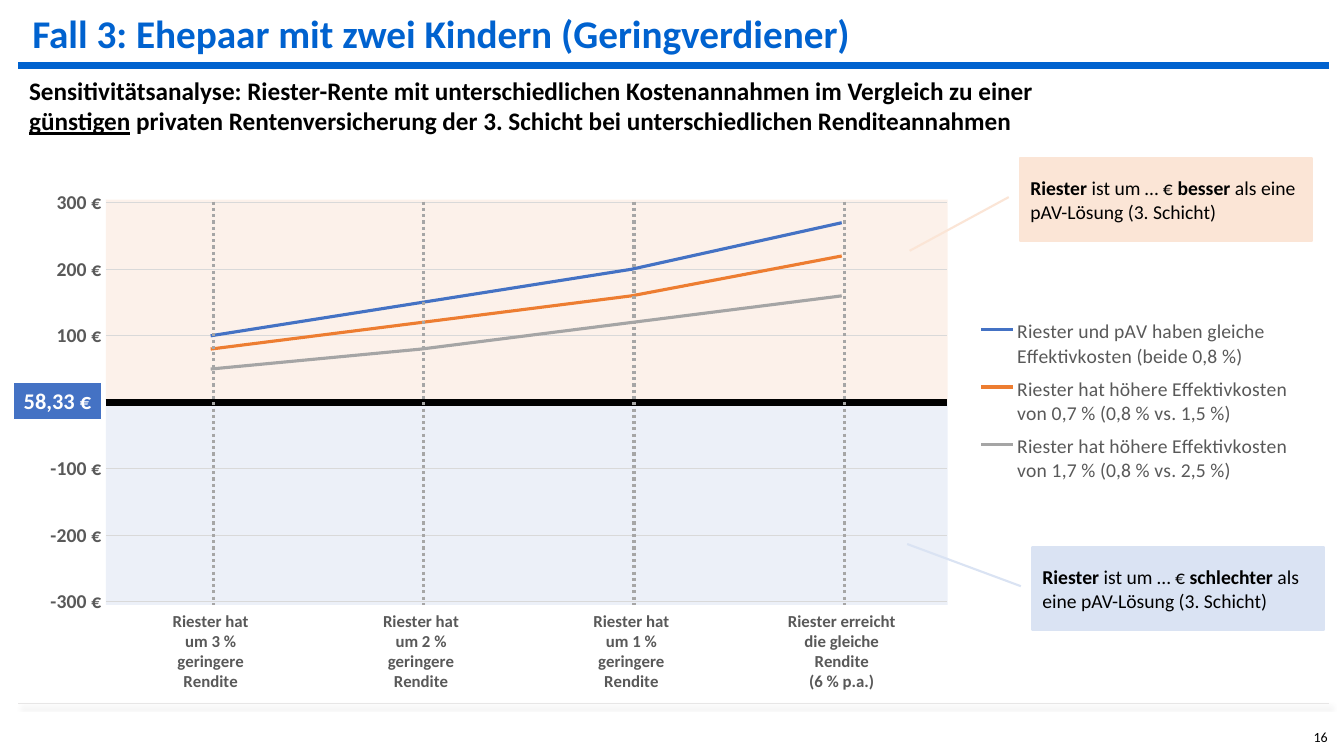
from dataclasses import dataclass
from typing import NamedTuple

from lxml.etree import SubElement
from pptx import Presentation
from pptx.chart.data import CategoryChartData
from pptx.dml.color import RGBColor
from pptx.enum.chart import XL_CHART_TYPE, XL_LEGEND_POSITION, XL_TICK_LABEL_POSITION, XL_TICK_MARK
from pptx.enum.dml import MSO_LINE
from pptx.enum.shapes import MSO_CONNECTOR, MSO_SHAPE
from pptx.enum.text import MSO_ANCHOR, MSO_AUTO_SIZE, PP_ALIGN
from pptx.oxml import parse_xml
from pptx.oxml.ns import nsdecls, qn
from pptx.util import Inches, Pt


@dataclass(frozen=True)
class Theme:
    font: str = "Calibri"
    brand: str = "0062CF"
    ink: str = "000000"
    paper: str = "FFFFFF"
    label: str = "595959"
    guide: str = "A6A6A6"
    grid: str = "D9D9D9"
    footer: str = "E7E6E6"
    better: str = "FBE5D6"
    worse: str = "DAE3F3"
    series: tuple = ("4472C4", "ED7D31", "A5A5A5")
    title_size: int = 28
    subtitle_size: int = 18
    value_size: int = 16
    body_size: int = 14
    category_size: int = 12
    small_size: int = 10


THEME = Theme()


def cells(count):
    return Inches(count / 10)


class Box(NamedTuple):
    left: float
    top: float
    width: float
    height: float

    def inner(self, left, top, width, height):
        return Box(self.left + left, self.top + top, width, height)

    def emu(self):
        return [cells(length) for length in self]


def style_font(font, size, color=THEME.ink, bold=False, underline=False):
    font.name = THEME.font
    font.size = Pt(size)
    font.bold = bold
    font.underline = underline
    font.color.rgb = RGBColor.from_string(color)


def add_text(frame, *parts, size, color=THEME.ink, bold=False, align=PP_ALIGN.LEFT,
             anchor=MSO_ANCHOR.TOP, wrap=True):
    frame.word_wrap = wrap
    frame.auto_size = MSO_AUTO_SIZE.NONE
    frame.vertical_anchor = anchor
    paragraph = frame.paragraphs[0]
    paragraph.alignment = align
    for part in parts:
        text, marks = part if isinstance(part, tuple) else (part, "")
        run = paragraph.add_run()
        run.text = text
        style_font(run.font, size, color, bold or "b" in marks, "u" in marks)


def add_panel(slide, box, color, kind=MSO_SHAPE.RECTANGLE, line=None, weight=1.5, alpha=None):
    panel = slide.shapes.add_shape(kind, *box.emu())
    panel.shadow.inherit = False
    panel.fill.solid()
    panel.fill.fore_color.rgb = RGBColor.from_string(color)
    if line:
        panel.line.color.rgb = RGBColor.from_string(line)
        panel.line.width = Pt(weight)
    else:
        panel.line.fill.background()
    if alpha:
        tint = panel.element.xpath(".//a:solidFill/a:srgbClr")[0]
        SubElement(tint, qn("a:alpha"), val=str(alpha * 1000))
    return panel


def add_rule(slide, box, color, weight, dash=None, shadow=False):
    left, top, width, height = box.emu()
    rule = slide.shapes.add_connector(MSO_CONNECTOR.STRAIGHT, left, top, left + width, top + height)
    rule.line.color.rgb = RGBColor.from_string(color)
    rule.line.width = Pt(weight)
    if dash:
        rule.line.dash_style = dash
    effects = SubElement(rule.element.spPr, qn("a:effectLst"))
    if shadow:
        drop = SubElement(effects, qn("a:outerShdw"), blurRad="38100", dist="38100", dir="2700000")
        black = SubElement(drop, qn("a:srgbClr"), val=THEME.ink)
        SubElement(black, qn("a:alpha"), val="40000")


def place_in_chart(parent, index, shares, target=""):
    for old in parent.findall(qn("c:layout")):
        parent.remove(old)
    lengths = "".join(f'<c:{tag} val="{share:.3f}"/>' for tag, share in zip("xywh", shares))
    parent.insert(index, parse_xml(
        f'<c:layout {nsdecls("c")}><c:manualLayout>{target}'
        f'<c:xMode val="edge"/><c:yMode val="edge"/>{lengths}</c:manualLayout></c:layout>'))


def build_header(slide, box):
    title = slide.shapes.title
    title.left, title.top, title.width, title.height = box.inner(0.4, 0.4, 129, 5.7).emu()
    add_text(title.text_frame, "Fall 3: Ehepaar mit zwei Kindern (Geringverdiener)",
             size=THEME.title_size, color=THEME.brand, bold=True)
    add_rule(slide, box.inner(0, 6.5, box.width, 0), THEME.brand, 4.5)
    subtitle = slide.shapes.add_textbox(*box.inner(0.1, 7, 111.9, 7.1).emu())
    add_text(subtitle.text_frame,
             "Sensitivitätsanalyse: Riester-Rente mit unterschiedlichen Kostenannahmen im Vergleich zu einer ",
             ("günstigen", "u"),
             " privaten Rentenversicherung der 3. Schicht bei unterschiedlichen Renditeannahmen",
             size=THEME.subtitle_size, bold=True)


def build_chart(slide, box, plot):
    data = CategoryChartData()
    data.categories = [
        "Riester hat\num 3 %\ngeringere\nRendite",
        "Riester hat\num 2 %\ngeringere\nRendite",
        "Riester hat\num 1 %\ngeringere\nRendite",
        "Riester erreicht\ndie gleiche\nRendite\n(6 % p.a.)",
    ]
    data.add_series("Riester und pAV haben gleiche\nEffektivkosten (beide 0,8 %)", (100, 150, 200, 270))
    data.add_series("Riester hat höhere Effektivkosten\nvon 0,7 % (0,8 % vs. 1,5 %)", (80, 120, 160, 220))
    data.add_series("Riester hat höhere Effektivkosten\nvon 1,7 % (0,8 % vs. 2,5 %)", (50, 80, 120, 160))
    chart = slide.shapes.add_chart(XL_CHART_TYPE.LINE, *box.emu(), data).chart
    chart.has_title = False
    style_font(chart.font, THEME.small_size)
    chart.plots[0].vary_by_categories = False
    for series, color in zip(chart.plots[0].series, THEME.series):
        series.smooth = False
        series.format.line.color.rgb = RGBColor.from_string(color)
        series.format.line.width = Pt(2.25)

    outcome, difference = chart.category_axis, chart.value_axis
    for axis, size in ((outcome, THEME.category_size), (difference, THEME.body_size)):
        axis.major_tick_mark = axis.minor_tick_mark = XL_TICK_MARK.NONE
        style_font(axis.tick_labels.font, size, THEME.label, bold=True)
    outcome.tick_label_position = XL_TICK_LABEL_POSITION.LOW
    outcome.format.line.color.rgb = RGBColor.from_string(THEME.ink)
    outcome.format.line.width = Pt(5)
    difference.minimum_scale, difference.maximum_scale, difference.major_unit = -300, 300, 100
    difference.tick_labels.number_format = '#,##0\\ "€"'
    difference.tick_labels.number_format_is_linked = False
    difference.format.line.fill.background()
    difference.major_gridlines.format.line.color.rgb = RGBColor.from_string(THEME.grid)
    difference.major_gridlines.format.line.width = Pt(0.75)

    chart.has_legend = True
    chart.legend.position = XL_LEGEND_POSITION.RIGHT
    chart.legend.include_in_layout = False
    style_font(chart.legend.font, THEME.body_size, THEME.label)
    shares = ((plot.left - box.left) / box.width, (plot.top - box.top) / box.height,
              plot.width / box.width, plot.height / box.height)
    place_in_chart(chart.element.xpath(".//c:plotArea")[0], 0, shares, '<c:layoutTarget val="inner"/>')
    place_in_chart(chart.element.xpath(".//c:legend")[0], 1, (0.72, 0.25, 0.27, 0.33))


def build_comparison(slide, box):
    plot = box.inner(7.6, 2.8, 83.5, 39.6)
    half = plot.height / 2
    band = half + 0.3
    add_panel(slide, plot.inner(0, half, plot.width, band), THEME.worse, alpha=50)
    add_panel(slide, plot.inner(0, half - band, plot.width, band), THEME.better, alpha=50)
    build_chart(slide, box, plot)
    column = plot.width / 4
    for index in range(4):
        center = column * (index + 0.5) + 0.2
        add_rule(slide, plot.inner(center, -0.1, 0, 40), THEME.guide, 2.25, MSO_LINE.ROUND_DOT)
    baseline = add_panel(slide, plot.inner(-9.2, half - 2, 8.8, 3.7), THEME.series[0],
                         line=THEME.paper, weight=0.75)
    add_text(baseline.text_frame, "58,33 €", size=THEME.value_size, color=THEME.paper, bold=True,
             align=PP_ALIGN.CENTER, anchor=MSO_ANCHOR.MIDDLE, wrap=False)


def build_callout(slide, box, color, verdict, rest, pointer):
    callout = add_panel(slide, box, color, MSO_SHAPE.LINE_CALLOUT_1, line=color)
    for index, share in enumerate((0.47, -0.04, *pointer)):
        callout.adjustments[index] = share
    add_text(callout.text_frame, ("Riester", "b"), " ist um … € ", (verdict, "b"), rest,
             size=THEME.body_size, anchor=MSO_ANCHOR.MIDDLE)


def build_footer(slide, box):
    add_rule(slide, box.inner(0, 0, box.width, 0), THEME.footer, 1, shadow=True)
    number = slide.shapes.add_textbox(*box.inner(127.5, 2, 4, 3.1).emu())
    add_text(number.text_frame, "16", size=THEME.small_size, wrap=False)


def main():
    deck = Presentation()
    deck.slide_width, deck.slide_height = cells(133.3), cells(75)
    slide = deck.slides.add_slide(deck.slide_layouts[5])
    build_header(slide, Box(1.8, 0, 130, 14.1))
    build_comparison(slide, Box(2.9, 17.3, 128.2, 54.3))
    build_callout(slide, Box(101.2, 15.7, 28.9, 8.2), THEME.better, "besser",
                  " als eine pAV-Lösung (3. Schicht)", (1.12, -0.38))
    build_callout(slide, Box(102.4, 54.3, 28.9, 8.2), THEME.worse, "schlechter",
                  " als eine pAV-Lösung (3. Schicht)", (-0.04, -0.43))
    build_footer(slide, Box(1.8, 69.8, 130, 5.2))
    deck.save("out.pptx")


if __name__ == "__main__":
    main()
